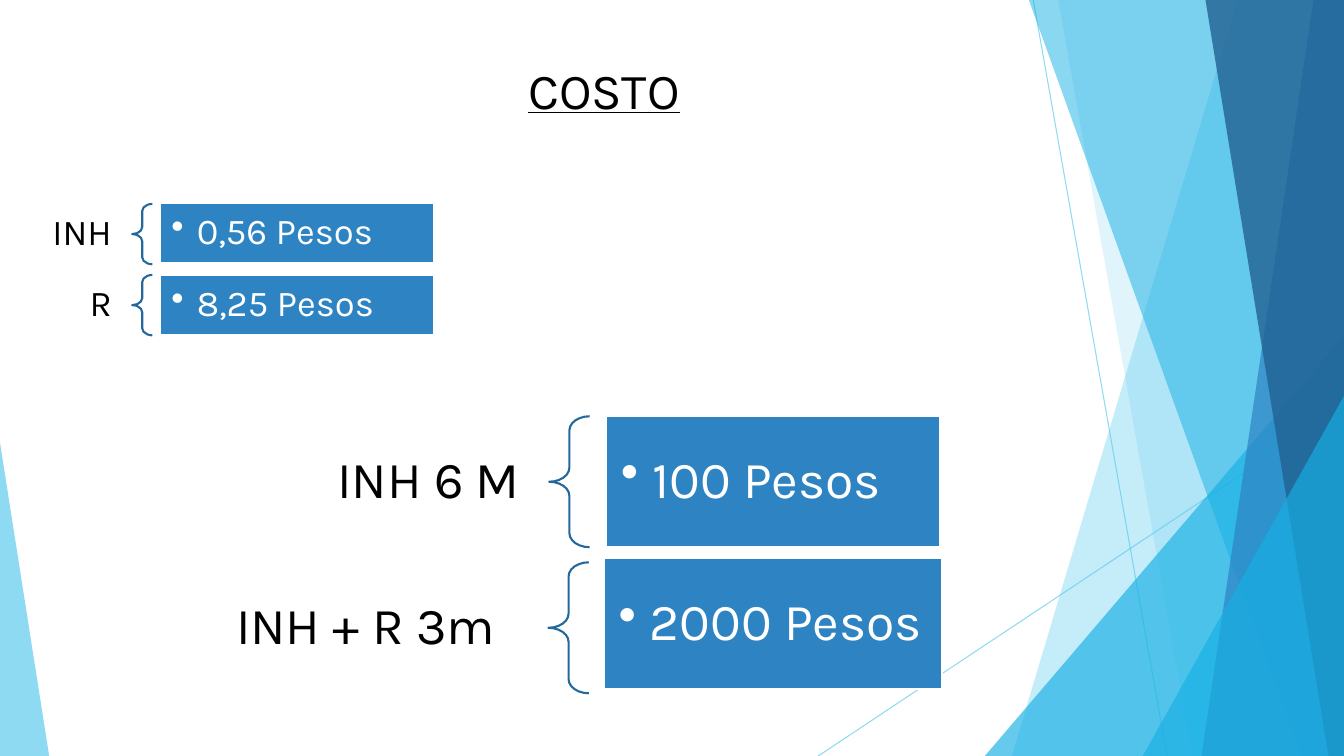
import pptx
import pptx.dml.color
import pptx.enum.shapes
import pptx.enum.text
import pptx.oxml.ns
import pptx.util
from lxml import etree

Cm = pptx.util.Cm
Pt = pptx.util.Pt
RGBColor = pptx.dml.color.RGBColor
Shape = pptx.enum.shapes.MSO_SHAPE
Align = pptx.enum.text.PP_ALIGN
Anchor = pptx.enum.text.MSO_ANCHOR
qn = pptx.oxml.ns.qn

SKY = RGBColor(0x5F, 0xCB, 0xEF)
CYAN = RGBColor(0x17, 0xB0, 0xE4)
BLUE = RGBColor(0x2E, 0x83, 0xC3)
NAVY = RGBColor(0x22, 0x62, 0x92)
BRACE = RGBColor(0x25, 0x69, 0x9C)
BLACK = RGBColor(0, 0, 0)
WHITE = RGBColor(255, 255, 255)

WIDTH, HEIGHT = 33.87, 19.05

# x at the top edge, x at the bottom edge, colour, opacity in percent
BANDS_BEHIND = [(31.19, 25.5, SKY, 36), (26.67, 30.05, SKY, 20)]
BANDS_FRONT = [(25.93, 32.79, CYAN, 50), (33.1, 30.28, BLUE, 70), (30.38, 33.48, NAVY, 80)]

SMALL = dict(size=26, indent=0.64, inset=0.28, label_inset=(0.51, 0.18))
LARGE = dict(size=37, indent=0.79, inset=0.38, label_inset=(0.74, 0.25))


def set_opacity(fill_parent, percent):
    color = fill_parent.find(".//" + qn("a:srgbClr"))
    etree.SubElement(color, qn("a:alpha")).set("val", str(percent * 1000))


def write(shape, text, *, size, color, align=Align.LEFT, anchor=Anchor.MIDDLE,
          insets=(0.25, 0.13, 0.25, 0.13), spacing=1.0, underline=False, bullet_indent=None):
    """Put one paragraph in a shape; insets are left, top, right, bottom in cm."""
    frame = shape.text_frame
    frame.word_wrap = True
    frame.vertical_anchor = anchor
    frame.margin_left, frame.margin_top, frame.margin_right, frame.margin_bottom = map(Cm, insets)
    para = frame.paragraphs[0]
    para.alignment = align
    para.line_spacing = spacing
    if bullet_indent:
        properties = para._p.get_or_add_pPr()
        properties.set("marL", str(Cm(bullet_indent)))
        properties.set("indent", str(-Cm(bullet_indent)))
        etree.SubElement(properties, qn("a:buChar")).set("char", "•")
    span = para.add_run()
    span.text = text
    span.font.name = "Karla"
    span.font.size = Pt(size)
    span.font.color.rgb = color
    span.font.underline = underline


class Page:
    def __init__(self, slide):
        self.shapes = slide.shapes

    def line(self, start, end):
        line = self.shapes.add_connector(
            pptx.enum.shapes.MSO_CONNECTOR.STRAIGHT, *map(Cm, start + end))
        line.line.color.rgb = SKY
        line.line.width = Pt(0.75)
        properties = line._element.spPr
        set_opacity(properties, 70)
        etree.SubElement(properties, qn("a:effectLst"))

    def paint(self, shape, color, opacity):
        shape.shadow.inherit = False
        shape.fill.solid()
        shape.fill.fore_color.rgb = color
        set_opacity(shape._element.spPr, opacity)
        shape.line.fill.background()

    def band(self, top_x, bottom_x, color, opacity):
        """Draw a slanted panel that reaches the right edge."""
        builder = self.shapes.build_freeform(Cm(top_x), 0)
        corners = [(WIDTH, 0), (WIDTH, HEIGHT), (bottom_x, HEIGHT)]
        builder.add_line_segments([(Cm(x), Cm(y)) for x, y in corners])
        self.paint(builder.convert_to_shape(), color, opacity)

    def triangle(self, left, top, width, apex, color, opacity):
        """Draw a triangle that stands on the bottom edge."""
        shape = self.shapes.add_shape(
            Shape.ISOSCELES_TRIANGLE, Cm(left), Cm(top), Cm(width), Cm(HEIGHT - top))
        shape.adjustments[0] = apex
        self.paint(shape, color, opacity)

    def text(self, text, left, top, width, height, **style):
        box = self.shapes.add_textbox(Cm(left), Cm(top), Cm(width), Cm(height))
        write(box, text, **style)

    def brace(self, left, top, width, height):
        shape = self.shapes.add_shape(Shape.LEFT_BRACE, Cm(left), Cm(top), Cm(width), Cm(height))
        shape.adjustments[0] = 0.35
        shape.shadow.inherit = False
        shape.fill.background()
        shape.line.color.rgb = BRACE
        shape.line.width = Pt(1.5)

    def price(self, text, left, top, width, height, size, indent, inset):
        box = self.shapes.add_shape(Shape.RECTANGLE, Cm(left), Cm(top), Cm(width), Cm(height))
        box.shadow.inherit = False
        box.fill.solid()
        box.fill.fore_color.rgb = BLUE
        box.line.color.rgb = WHITE
        box.line.width = Pt(1.5)
        write(box, text, size=size, color=WHITE, insets=(inset,) * 4,
              spacing=0.9, bullet_indent=indent)

    def cost(self, label, price, label_left, brace, box, scale, extra_right=0):
        """Draw a label, its brace and its price box."""
        side, end = scale["label_inset"]
        self.text(label, label_left, brace[1], brace[0] - label_left, brace[3],
                  size=scale["size"], color=BLACK, align=Align.RIGHT, spacing=0.9,
                  insets=(side, end, side + extra_right, end))
        self.brace(*brace)
        self.price(price, *box, scale["size"], scale["indent"], scale["inset"])


def main():
    deck = pptx.Presentation()
    deck.slide_width, deck.slide_height = Cm(WIDTH), Cm(HEIGHT)
    page = Page(deck.slides.add_slide(deck.slide_layouts[6]))

    page.line((26.04, 0), (29.41, HEIGHT))
    page.line((WIDTH, 10.24), (20.62, HEIGHT))
    for band in BANDS_BEHIND:
        page.band(*band)
    page.triangle(24.82, 8.46, 9.05, 1, CYAN, 66)
    for band in BANDS_FRONT:
        page.band(*band)
    page.triangle(28.8, 9.98, 5.07, 1, CYAN, 66)
    page.triangle(0, 11.15, 1.24, 0, SKY, 70)

    page.cost("INH", "0,56 Pesos", 0.79, (3.33, 5.14, 0.51, 1.52),
              (4.04, 5.11, 6.91, 1.52), SMALL)
    page.cost("R", "8,25 Pesos", 0.79, (3.33, 6.93, 0.51, 1.52),
              (4.04, 6.93, 6.91, 1.52), SMALL)
    page.cost("INH 6 M", "100 Pesos", 3.91, (13.84, 10.49, 1.02, 3.3),
              (15.27, 10.49, 8.41, 3.3), LARGE)
    page.cost("INH + R 3m", "2000 Pesos", 3.91, (13.82, 14.17, 1.02, 3.3),
              (15.21, 14.07, 8.53, 3.3), LARGE, extra_right=0.6)

    page.text("COSTO", 13.06, 1.35, 7.57, 3.66, size=36, color=BLACK,
              anchor=Anchor.TOP, underline=True)
    deck.save("out.pptx")


if __name__ == "__main__":
    main()
